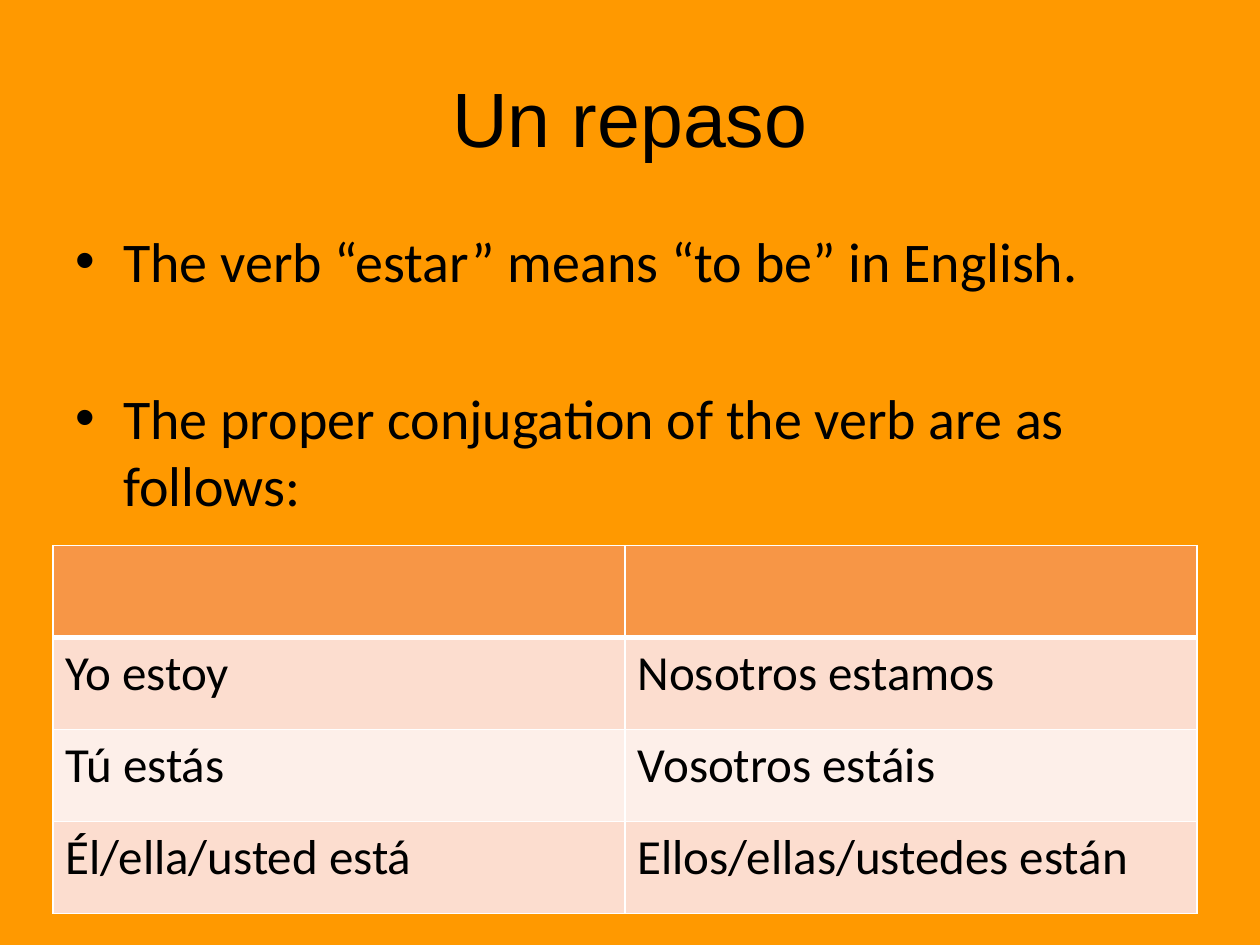
import pptx
import pptx.util
import pptx.dml.color
import pptx.enum.text
import pptx.oxml
import pptx.oxml.ns
from pptx.util import Inches

BLACK, WHITE, ORANGE = "000000", "FFFFFF", "FF9900"
HEADER, BANDS = "F79646", ("FCDDCF", "FDEFE9")
BULLETS = [
    ("The verb “estar” means “to be” in English.", 6),
    ("The proper conjugation of the verb are as follows:", 51),
]
VERB_FORMS = [
    ("", ""),
    ("Yo estoy", "Nosotros estamos"),
    ("Tú estás", "Vosotros estáis"),
    ("Él/ella/usted está", "Ellos/ellas/ustedes están"),
]


def rgb(value):
    """Return the colour for a hex string."""
    return pptx.dml.color.RGBColor.from_string(value)


def add_run(p, text, size=32, font="Calibri", color=BLACK):
    """Add formatted text to a paragraph."""
    r = p.add_run()
    r.text = text
    r.font.size = pptx.util.Pt(size)
    r.font.name = font
    r.font.color.rgb = rgb(color)


def add_frame(s, box, anchor):
    """Add a wrapping text box and return its text frame."""
    tf = s.shapes.add_textbox(*map(Inches, box)).text_frame
    tf.word_wrap = True
    tf.vertical_anchor = anchor
    return tf


def set_bullet(p, indent):
    """Give a paragraph a round bullet with a hanging indent."""
    pPr = p._p.get_or_add_pPr()
    pPr.set("marL", str(Inches(indent)))
    pPr.set("indent", str(-Inches(indent)))
    ns = pptx.oxml.ns.nsdecls("a")
    pPr.append(pptx.oxml.parse_xml(f'<a:buFont {ns} typeface="Arial"/>'))
    pPr.append(pptx.oxml.parse_xml(f'<a:buChar {ns} char="•"/>'))


def set_borders(cell, **widths):
    """Draw white cell borders with widths in points, keyed by side."""
    tcPr = cell._tc.get_or_add_tcPr()
    for i, (side, width) in enumerate(widths.items()):
        tcPr.insert(i, pptx.oxml.parse_xml(
            f'<a:ln{side} {pptx.oxml.ns.nsdecls("a")} w="{pptx.util.Pt(width)}">'
            f'<a:solidFill><a:srgbClr val="{WHITE}"/></a:solidFill></a:ln{side}>'))


def add_title(s, box, text):
    """Add the centred slide title."""
    p = add_frame(s, box, pptx.enum.text.MSO_ANCHOR.MIDDLE).paragraphs[0]
    p.alignment = pptx.enum.text.PP_ALIGN.CENTER
    add_run(p, text, size=44, font="Arial")


def add_bullets(s, box, bullets):
    """Add the bulleted body from pairs of text and space before."""
    tf = add_frame(s, box, pptx.enum.text.MSO_ANCHOR.TOP)
    for i, (text, space) in enumerate(bullets):
        p = tf.add_paragraph() if i else tf.paragraphs[0]
        p.space_before = pptx.util.Pt(space)
        set_bullet(p, 0.38)
        add_run(p, text)


def add_verb_table(s, box, rows):
    """Add the conjugation table with a header row and banded rows."""
    table = s.shapes.add_table(len(rows), len(rows[0]), *map(Inches, box)).table
    for i, texts in enumerate(rows):
        for j, text in enumerate(texts):
            cell = table.cell(i, j)
            cell.fill.solid()
            cell.fill.fore_color.rgb = rgb(BANDS[(i - 1) % 2] if i else HEADER)
            set_borders(cell, L=1, R=1, T=3 if i == 1 else 1, B=1 if i else 3)
            if text:
                add_run(cell.text_frame.paragraphs[0], text, size=28)


def main():
    """Build and save the slide."""
    prs = pptx.Presentation()
    prs.slide_width, prs.slide_height = Inches(10), Inches(7.5)
    s = prs.slides.add_slide(prs.slide_layouts[6])
    s.background.fill.solid()
    s.background.fill.fore_color.rgb = rgb(ORANGE)
    add_title(s, (0.5, 0.3, 9, 1.25), "Un repaso")
    add_bullets(s, (0.5, 1.75, 9, 4.95), BULLETS)
    add_verb_table(s, (0.42, 4.33, 9.08, 2.92), VERB_FORMS)
    prs.save("out.pptx")


if __name__ == "__main__":
    main()
